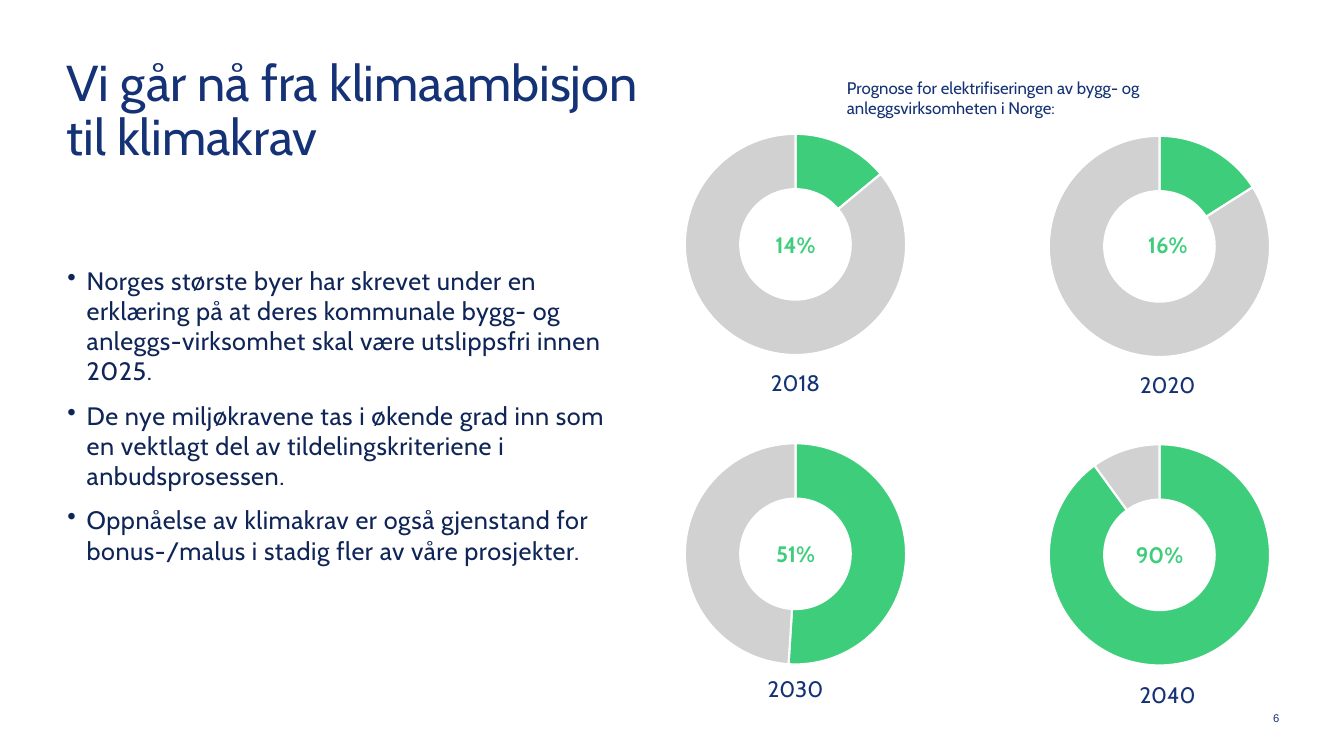
import pptx
import pptx.chart.data
import pptx.dml.color
import pptx.enum.chart
import pptx.enum.text
import pptx.oxml
import pptx.oxml.ns
import pptx.util

Inches = pptx.util.Inches
Pt = pptx.util.Pt
ALIGN = pptx.enum.text.PP_ALIGN
ANCHOR = pptx.enum.text.MSO_ANCHOR

NAVY, INK, GREEN, GREY, WHITE = "143275", "0F2558", "3ECE7B", "D1D1D1", "FFFFFF"

TITLE = "Vi går nå fra klimaambisjon til klimakrav"
BULLETS = [
    "Norges største byer har skrevet under en erklæring på at deres kommunale "
    "bygg- og anleggs-virksomhet skal være utslippsfri innen 2025.",
    "De nye miljøkravene tas i økende grad inn som en vektlagt del av "
    "tildelingskriteriene i anbudsprosessen.",
    "Oppnåelse av klimakrav er også gjenstand for bonus-/malus i stadig fler "
    "av våre prosjekter.",
]
CAPTION = "Prognose for elektrifiseringen av bygg- og anleggsvirksomheten i Norge:"

# Year, electrified share, chart left and top, then the label offsets from the
# chart: share centre shift, share top, year centre shift, year top
RING_SIZE = (4.08, 2.47)
RINGS = [
    ("2018", 14, 5.85, 1.19, 0, 1.10, 0, 2.47),
    ("2020", 16, 9.46, 1.21, 0.08, 1.08, 0.08, 2.47),
    ("2030", 51, 5.85, 4.26, 0, 1.10, 0, 2.44),
    ("2040", 90, 9.46, 4.27, 0, 1.10, 0.08, 2.49),
]


def colour(code):
    return pptx.dml.color.RGBColor.from_string(code)


def format_frame(frame, anchor=ANCHOR.TOP):
    frame.word_wrap = True
    frame.auto_size = pptx.enum.text.MSO_AUTO_SIZE.NONE
    frame.vertical_anchor = anchor
    frame.margin_left = frame.margin_right = 0
    frame.margin_top = frame.margin_bottom = 0


def write(para, text, size=16, fill=NAVY, font="Cabin", bold=False, align=ALIGN.LEFT):
    para.alignment = align
    span = para.add_run()
    span.text = text
    span.font.name = font
    span.font.size = Pt(size)
    span.font.bold = bold
    span.font.color.rgb = colour(fill)
    return span


def add_label(slide, box, text, anchor=ANCHOR.TOP, **style):
    frame = slide.shapes.add_textbox(*map(Inches, box)).text_frame
    format_frame(frame, anchor)
    write(frame.paragraphs[0], text, **style)


def add_title(slide, box):
    title = slide.shapes.title
    title.left, title.top, title.width, title.height = map(Inches, box)
    format_frame(title.text_frame, ANCHOR.MIDDLE)
    para = title.text_frame.paragraphs[0]
    para.line_spacing = 0.9
    write(para, TITLE, size=36)


def add_bullets(slide, box):
    frame = slide.shapes.add_textbox(*map(Inches, box)).text_frame
    format_frame(frame)
    for index, text in enumerate(BULLETS):
        para = frame.paragraphs[0] if index == 0 else frame.add_paragraph()
        # Hanging bullet
        properties = para._p.get_or_add_pPr()
        properties.set("marL", str(Inches(0.2)))
        properties.set("indent", str(Inches(-0.19)))
        bullet = pptx.oxml.parse_xml(
            f'<a:buChar {pptx.oxml.ns.nsdecls("a")} char="•"/>')
        properties.append(bullet)
        if index:
            para.space_before = Pt(10)
        span = write(para, text, size=18, fill=INK)
        # Letter spacing in hundredths of a point
        span._r.get_or_add_rPr().set("spc", "40")


def add_doughnut(slide, box, share):
    data = pptx.chart.data.CategoryChartData()
    data.categories = ["1", "2"]
    data.add_series("Series 1", (share, 100 - share))
    chart = slide.shapes.add_chart(
        pptx.enum.chart.XL_CHART_TYPE.DOUGHNUT, *map(Inches, box), data).chart
    chart.has_legend = False
    chart.has_title = False
    chart.font.name = "Arial"
    chart.font.size = Pt(10)
    chart.font.color.rgb = colour("000000")
    plot = chart.plots[0]
    plot.vary_by_categories = True
    plot.has_data_labels = False
    for hole in plot._element.findall(pptx.oxml.ns.qn("c:holeSize")):
        hole.set("val", "75")
    for index, code in enumerate((GREEN, GREY)):
        part = plot.series[0].points[index].format
        part.fill.solid()
        part.fill.fore_color.rgb = colour(code)
        part.line.color.rgb = colour(WHITE)
        part.line.width = Pt(1.5)


def add_ring(slide, year, share, left, top, share_shift, share_top, year_shift, year_top):
    width, height = RING_SIZE
    add_doughnut(slide, (left, top, width, height), share)
    middle = left + width / 2
    # Share in the hole, year below the ring
    for text, label_width, shift, offset, fill, bold in (
        (f"{share}%", 1.35, share_shift, share_top, GREEN, True),
        (year, 1.05, year_shift, year_top, NAVY, False),
    ):
        box = (middle + shift - label_width / 2, top + offset, label_width, 0.27)
        add_label(slide, box, text, fill=fill, bold=bold, align=ALIGN.CENTER)


def main():
    deck = pptx.Presentation()
    deck.slide_width, deck.slide_height = Inches(13.33), Inches(7.5)
    slide = deck.slides.add_slide(deck.slide_layouts.get_by_name("Title Only"))

    # Left half: title and bullets
    add_title(slide, (0.66, 0.58, 6.17, 1.07))
    add_bullets(slide, (0.66, 2.63, 5.54, 3.46))

    # Right half: caption and forecast rings
    for ring in RINGS:
        add_ring(slide, *ring)
    add_label(slide, (8.4, 0.77, 2.92, 0.4), CAPTION, size=12)

    # Page number
    add_label(slide, (10.95, 7.06, 1.74, 0.12), "6", anchor=ANCHOR.MIDDLE,
              size=8, font="Arial", align=ALIGN.RIGHT)
    deck.save("out.pptx")


if __name__ == "__main__":
    main()
